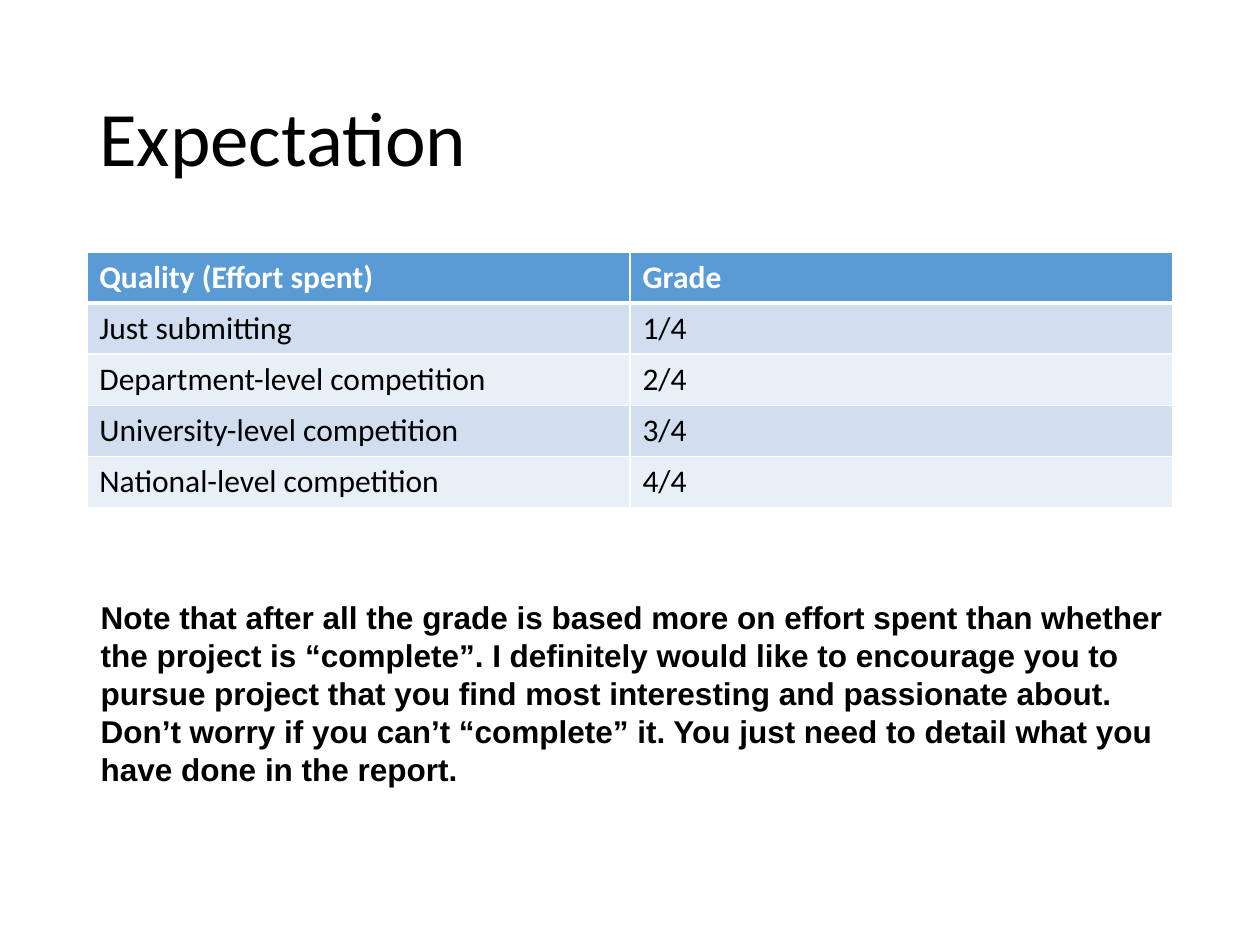
import lxml.etree
import pptx
import pptx.dml.color
import pptx.enum.text
import pptx.oxml.ns
import pptx.util

Cm = pptx.util.Cm
Pt = pptx.util.Pt
MIDDLE = pptx.enum.text.MSO_ANCHOR.MIDDLE
TOP = pptx.enum.text.MSO_ANCHOR.TOP

GRADES = [
    ("Quality (Effort spent)", "Grade"),
    ("Just submitting", "1/4"),
    ("Department-level competition", "2/4"),
    ("University-level competition", "3/4"),
    ("National-level competition", "4/4"),
]
NOTE = (
    "Note that after all the grade is based more on effort spent than whether "
    "the project is “complete”. I definitely would like to encourage you to "
    "pursue project that you find most interesting and passionate about.  "
    "Don’t worry if you can’t “complete” it. You just need to detail what you "
    "have done in the report."
)


def colour(value):
    return pptx.dml.color.RGBColor.from_string(value)


def assign(target, values):
    for name, value in values.items():
        setattr(target, name, value)


class SlideBuilder:
    body_font = "Calibri"
    note_font = "Arial"
    ink = "000000"
    paper = "FFFFFF"
    header_fill = "5B9BD5"
    band_fills = ("E9EFF7", "D1DEEF")
    thin, thick = 0.96, 3

    def __init__(self, page):
        self.page = page

    def add_span(self, paragraph, text, ink, **font):
        span = paragraph.add_run()
        span.text = text
        assign(span.font, font)
        span.font.color.rgb = colour(ink)

    def add_text(self, place, text, anchor=TOP, spacing=1.0, **font):
        box = self.page.shapes.add_textbox(*map(Cm, place))
        assign(box.text_frame, {"word_wrap": True, "vertical_anchor": anchor})
        paragraph = box.text_frame.paragraphs[0]
        paragraph.line_spacing = spacing
        self.add_span(paragraph, text, self.ink, **font)

    def add_border(self, cell, side, width):
        properties = cell._tc.get_or_add_tcPr()
        qualify = pptx.oxml.ns.qn
        line = lxml.etree.SubElement(properties, qualify(f"a:ln{side}"), w=str(Pt(width)))
        fill = lxml.etree.SubElement(line, qualify("a:solidFill"))
        lxml.etree.SubElement(fill, qualify("a:srgbClr"), val=self.paper)

    def fill_cell(self, cell, text, row):
        header = row == 0
        widths = {
            "L": self.thin,
            "R": self.thin,
            "T": self.thick if row == 1 else self.thin,
            "B": self.thick if header else self.thin,
        }
        for side, width in widths.items():
            self.add_border(cell, side, width)
        cell.fill.solid()
        cell.fill.fore_color.rgb = colour(self.header_fill if header else self.band_fills[row % 2])
        self.add_span(cell.text_frame.paragraphs[0], text, self.paper if header else self.ink,
                      name=self.body_font, size=Pt(18), bold=header)

    def add_table(self, place, rows):
        frame = self.page.shapes.add_table(len(rows), len(rows[0]), *map(Cm, place))
        for row, texts in enumerate(rows):
            for column, text in enumerate(texts):
                self.fill_cell(frame.table.cell(row, column), text, row)


def main():
    deck = pptx.Presentation()
    assign(deck, {"slide_width": Cm(25.4), "slide_height": Cm(19.05)})
    builder = SlideBuilder(deck.slides.add_slide(deck.slide_layouts[6]))
    builder.add_text((1.75, 1.01, 21.9, 3.68), "Expectation", MIDDLE, 0.9,
                     name=builder.body_font, size=Pt(44))
    builder.add_table((1.75, 5.08, 21.9, 5.15), GRADES)
    builder.add_text((1.78, 11.94, 22.1, 3.81), NOTE,
                     name=builder.note_font, size=Pt(18), bold=True)
    deck.save("out.pptx")


if __name__ == "__main__":
    main()
